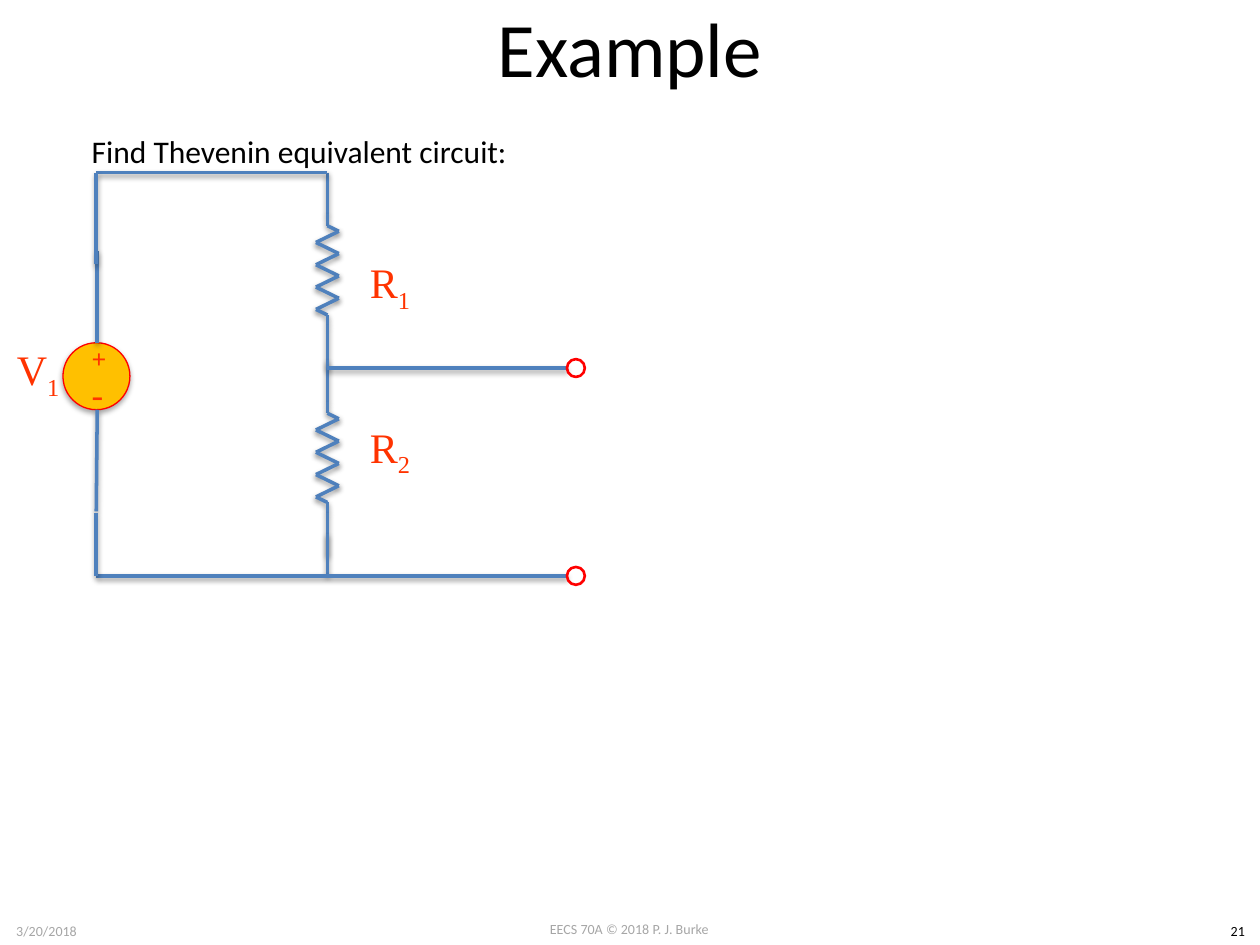
"""Build the Thevenin equivalent example slide with its voltage divider circuit."""
from lxml import etree
from pptx import Presentation
from pptx.dml.color import RGBColor
from pptx.enum import shapes, text
from pptx.oxml.ns import qn
from pptx.util import Cm, Pt

THEME = {
    "sans": "Calibri", "serif": "Times New Roman",
    "ink": "000000", "muted": "A6A6A6", "wire": "4F81BD",
    "label": "FF3300", "source": "FFC000", "outline": "FF0000",
    "title": 44, "prompt": 18, "symbol": 24, "plus": 14.8, "minus": 20, "footer": 8,
    "wire_width": 2, "terminal_width": 1.5, "source_width": 0.75,
}

TITLE = ("Example", (1.27, -0.64, 22.86, 3.18))
PROMPT = ("Find Thevenin equivalent circuit:", (1.6, 2.54, 8.99, 1.02))
FOOTERS = [
    ("EECS 70A © 2018 P. J. Burke", "muted", (9.73, 18.44, 5.92, 0.61)),
    ("3/20/2018", "muted", (0, 18.47, 1.88, 0.61)),
    ("21", "ink", (24.51, 18.47, 0.89, 0.61)),
]
SYMBOLS = [("R", "2", 6.35, 8.15), ("R", "1", 6.35, 4.83), ("V", "1", -0.74, 6.58)]
SYMBOL_SIZE = (3.02, 1.85)
POLARITY = [("+", "plus", True, 6.81), ("-", "minus", False, 7.52)]

LEFT, BRANCH, PORT = 1.94, 6.6, 11.43
TOP, MIDDLE, BOTTOM = 3.48, 7.42, 11.61
RESISTOR_TOPS = [TOP, 7.26]
ZIGZAG_START, ZIGZAG_STEP, ZIGZAG_HALF_WIDTH, ZIGZAG_TURNS = 1.07, 0.225, 0.23, 8
LEADS_IN, LEADS_OUT = [0, 0.84, ZIGZAG_START], [2.87, 3.08, 3.94]
SOURCE_TOP, SOURCE_SIZE, TERMINAL_SIZE = 6.91, 1.35, 0.36
SOURCE_LEADS = [((1.94, 10.31), (1.96, 8.26)), ((1.96, SOURCE_TOP), (1.96, 5.05))]
WIRES = [
    ((BRANCH, BOTTOM), (BRANCH, 10.77)),
    ((BRANCH, TOP), (LEFT, TOP)),
    ((LEFT, 5.33), (LEFT, TOP)),
    ((PORT, BOTTOM), (LEFT, BOTTOM)),
    ((LEFT, 10.34), (LEFT, BOTTOM)),
    ((PORT, MIDDLE), (BRANCH, MIDDLE)),
]


def color(name):
    return RGBColor.from_string(THEME[name])


def style(run, face, size, ink, bold=False):
    run.font.name, run.font.size, run.font.bold = THEME[face], Pt(THEME[size]), bold
    run.font.color.rgb = color(ink)


def cast_shadow(part, opacity, distance):
    properties = part._element.spPr
    for previous in properties.findall(qn("a:effectLst")):
        properties.remove(previous)
    effects = etree.SubElement(properties, qn("a:effectLst"))
    shadow = etree.SubElement(effects, qn("a:outerShdw"), blurRad=str(Pt(3.1)),
                              dist=str(Pt(distance)), dir="5400000", rotWithShape="0")
    tint = etree.SubElement(shadow, qn("a:srgbClr"), val=THEME["ink"])
    etree.SubElement(tint, qn("a:alpha"), val=str(opacity * 1000))


def add_wire(parent, start, end):
    wire = parent.add_connector(shapes.MSO_CONNECTOR.STRAIGHT,
                                *(Cm(value) for value in start + end))
    wire.line.color.rgb, wire.line.width = color("wire"), Pt(THEME["wire_width"])
    cast_shadow(wire, 38, 1.6)


def add_circle(parent, left, top, size, width):
    circle = parent.add_shape(shapes.MSO_SHAPE.OVAL, Cm(left), Cm(top), Cm(size), Cm(size))
    circle.shadow.inherit = False
    circle.fill.background()
    circle.line.color.rgb, circle.line.width = color("outline"), Pt(THEME[width])
    return circle


def add_label(parent, wording, box, face, size, ink, bold=False, centred=True,
              middle=False, wrap=True):
    frame = parent.add_textbox(*(Cm(value) for value in box)).text_frame
    frame.word_wrap = wrap
    frame.vertical_anchor = text.MSO_ANCHOR.MIDDLE if middle else text.MSO_ANCHOR.TOP
    frame.text = wording
    paragraph = frame.paragraphs[0]
    paragraph.alignment = text.PP_ALIGN.CENTER if centred else text.PP_ALIGN.LEFT
    style(paragraph.runs[0], face, size, ink, bold)
    return paragraph


def add_symbol(parent, letter, index, left, top):
    paragraph = add_label(parent, letter, (left, top, *SYMBOL_SIZE),
                          "serif", "symbol", "label", middle=True)
    subscript = paragraph.add_run()
    subscript.text = index
    style(subscript, "serif", "symbol", "label")
    subscript._r.get_or_add_rPr().set("baseline", "-25000")


def add_resistor(parent, top):
    turns = [((-1) ** turn * ZIGZAG_HALF_WIDTH, ZIGZAG_START + (turn + 0.5) * ZIGZAG_STEP)
             for turn in range(ZIGZAG_TURNS)]
    offsets = [(0, y) for y in LEADS_IN] + turns + [(0, y) for y in LEADS_OUT]
    points = [(BRANCH + x, top + y) for x, y in offsets]
    resistor = parent.add_group_shape().shapes
    for start, end in zip(points, points[1:]):
        add_wire(resistor, start, end)


def add_source(parent):
    source = parent.add_group_shape().shapes
    body = add_circle(source, 1.27, SOURCE_TOP, SOURCE_SIZE, "source_width")
    body.fill.solid()
    body.fill.fore_color.rgb = color("source")
    cast_shadow(body, 35, 1.8)
    for sign, size, bold, top in POLARITY:
        add_label(source, sign, (1.6, top, 0.66, 0.84), "serif", size, "label",
                  bold=bold, middle=True)
    for start, end in SOURCE_LEADS:
        add_wire(source, start, end)


def add_title(slide):
    wording, box = TITLE
    title = slide.shapes.title
    title.left, title.top, title.width, title.height = (Cm(value) for value in box)
    title.text_frame.text = wording
    title.text_frame.vertical_anchor = text.MSO_ANCHOR.MIDDLE
    paragraph = title.text_frame.paragraphs[0]
    paragraph.alignment = text.PP_ALIGN.CENTER
    style(paragraph.runs[0], "sans", "title", "ink")


def main():
    deck = Presentation()
    deck.slide_width, deck.slide_height = Cm(25.4), Cm(19.05)
    slide = deck.slides.add_slide(deck.slide_layouts[5])
    canvas = slide.shapes
    add_title(slide)
    for wording, ink, box in FOOTERS:
        add_label(canvas, wording, box, "sans", "footer", ink, wrap=False)
    for top in RESISTOR_TOPS:
        add_resistor(canvas, top)
    add_source(canvas)
    for start, end in WIRES:
        add_wire(canvas, start, end)
    for symbol in SYMBOLS:
        add_symbol(canvas, *symbol)
    for level in (MIDDLE, BOTTOM):
        add_circle(canvas, PORT, level - TERMINAL_SIZE / 2, TERMINAL_SIZE, "terminal_width")
    add_label(canvas, *PROMPT, "sans", "prompt", "ink", centred=False, wrap=False)
    deck.save("out.pptx")


if __name__ == "__main__":
    main()
